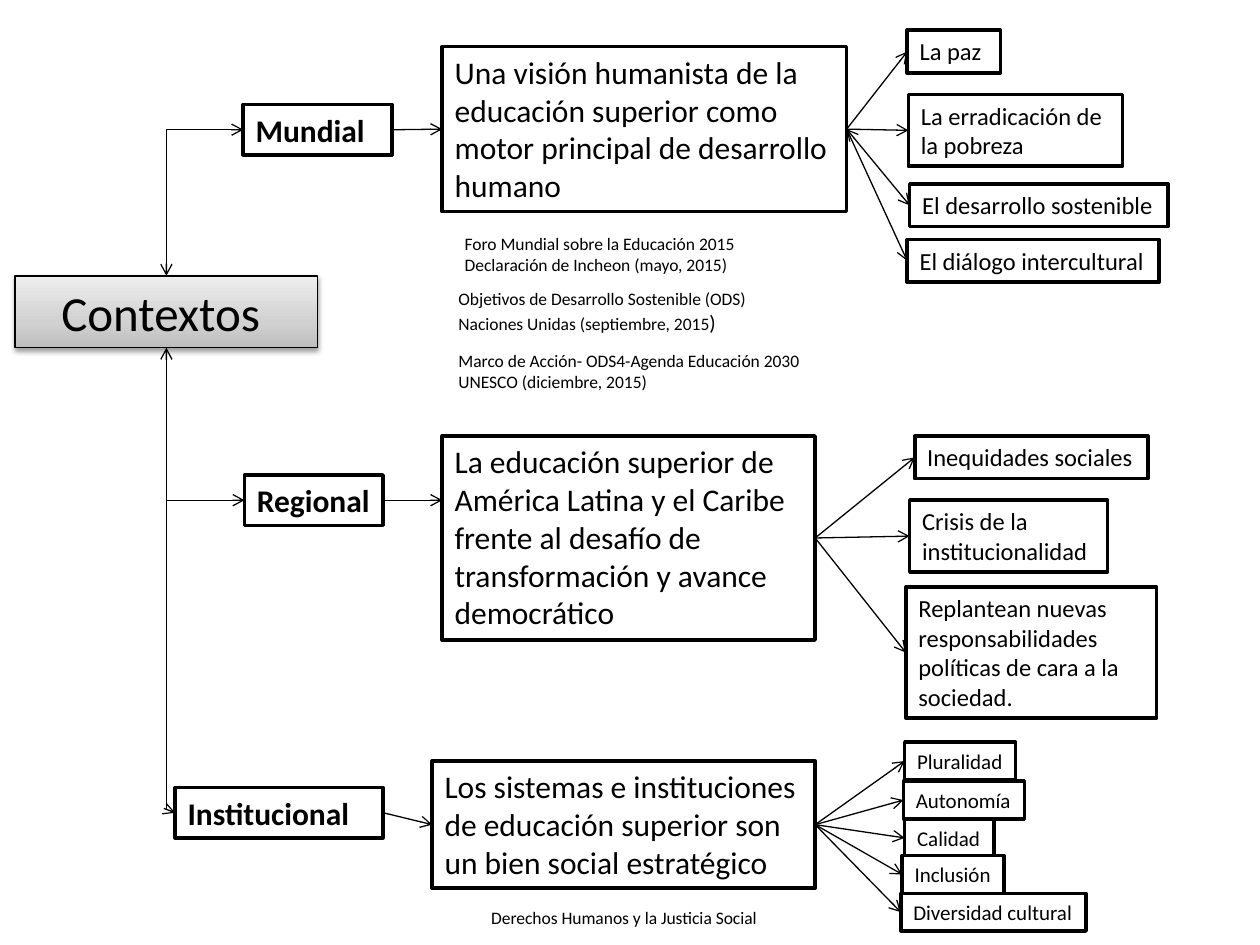
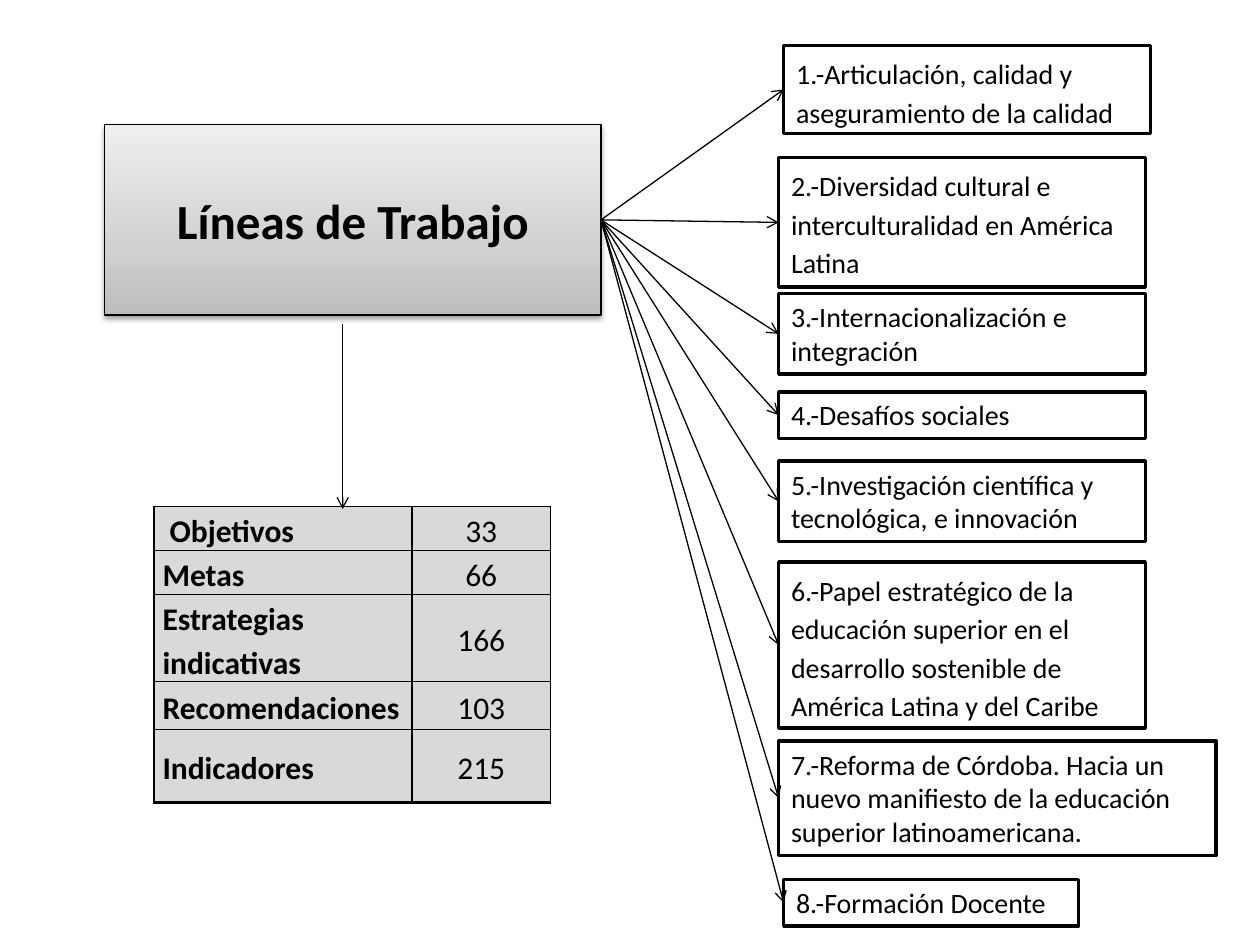
from copy import deepcopy

from lxml import etree
from pptx import Presentation
from pptx.dml.color import RGBColor
from pptx.enum import shapes, text
from pptx.oxml import ns
from pptx.util import Inches, Pt

BLACK = RGBColor(0x00, 0x00, 0x00)
WHITE = RGBColor(0xFF, 0xFF, 0xFF)
CELL_GRAY = RGBColor(0xD9, 0xD9, 0xD9)
GRADIENT = (
    (0, RGBColor(0xBD, 0xBD, 0xBD)),
    (0.35, RGBColor(0xD1, 0xD1, 0xD1)),
    (1, RGBColor(0xEE, 0xEE, 0xEE)),
)
FONT = "Calibri"
TOP, LEFT, BOTTOM, RIGHT = range(4)


def add_xml(parent, tag, **attributes):
    return etree.SubElement(parent, ns.qn(tag), {key: str(value) for key, value in attributes.items()})


class Diagram:
    def __init__(self):
        self.presentation = Presentation()
        self.presentation.slide_width = Inches(10)
        self.presentation.slide_height = Inches(7.5)
        self.slide = None

    def new_slide(self):
        self.slide = self.presentation.slides.add_slide(self.presentation.slide_layouts[6])

    def add_text(self, frame, runs, bold=False, alignment=text.PP_ALIGN.LEFT, spacing=None):
        paragraph = frame.paragraphs[0]
        paragraph.alignment = alignment
        if spacing:
            paragraph.line_spacing = spacing
        for content, size in runs:
            for index, line in enumerate(content.split("\n")):
                if index:
                    paragraph.add_line_break()
                run = paragraph.add_run()
                run.text = line
                run.font.name = FONT
                run.font.size = Pt(size)
                run.font.bold = bold
                run.font.color.rgb = BLACK

    def rectangle(self, place, line_width):
        shape = self.slide.shapes.add_shape(shapes.MSO_SHAPE.RECTANGLE, *map(Inches, place))
        shape.shadow.inherit = False
        shape.line.color.rgb = BLACK
        shape.line.width = Pt(line_width)
        return shape

    def box(self, content, place, size, bold=False, wrap=True, spacing=None):
        shape = self.rectangle(place, 2)
        shape.fill.solid()
        shape.fill.fore_color.rgb = WHITE
        frame = shape.text_frame
        frame.word_wrap = wrap
        frame.vertical_anchor = text.MSO_ANCHOR.TOP
        frame.auto_size = text.MSO_AUTO_SIZE.SHAPE_TO_FIT_TEXT
        self.add_text(frame, [(content, size)], bold, spacing=spacing)
        return shape

    def heading(self, content, place, bold=False):
        shape = self.rectangle(place, 0.75)
        shape.fill.gradient()
        properties = shape._element.spPr
        stops = properties.find(".//" + ns.qn("a:gsLst"))
        stops.insert(1, deepcopy(stops[0]))
        for stop, (position, color) in zip(shape.fill.gradient_stops, GRADIENT):
            stop.position = position
            stop.color.rgb = color
        shape.fill.gradient_angle = 90
        shadow = add_xml(properties.find(ns.qn("a:effectLst")), "a:outerShdw",
                         blurRad=Pt(3.1), dist=Pt(1.6), dir=5400000, rotWithShape=0)
        add_xml(add_xml(shadow, "a:srgbClr", val=BLACK), "a:alpha", val=38000)
        shape.text_frame.word_wrap = True
        shape.text_frame.vertical_anchor = text.MSO_ANCHOR.MIDDLE
        self.add_text(shape.text_frame, [(content, 28)], bold, text.PP_ALIGN.CENTER)
        return shape

    def note(self, runs, place, wrap=True):
        frame = self.slide.shapes.add_textbox(*map(Inches, place)).text_frame
        frame.word_wrap = wrap
        frame.auto_size = text.MSO_AUTO_SIZE.SHAPE_TO_FIT_TEXT
        self.add_text(frame, runs)

    def line(self, points=(0, 0, 0, 0), kind=shapes.MSO_CONNECTOR.STRAIGHT, head=False):
        connector = self.slide.shapes.add_connector(kind, *map(Inches, points))
        connector.line.color.rgb = BLACK
        connector.line.width = Pt(0.75)
        properties = connector._element.spPr
        outline = properties.find(ns.qn("a:ln"))
        if head:
            add_xml(outline, "a:headEnd", type="arrow")
        add_xml(outline, "a:tailEnd", type="arrow")
        add_xml(properties, "a:effectLst")
        return connector

    def arrow(self, source, target, head=False):
        connector = self.line(head=head)
        connector.begin_connect(source, RIGHT)
        connector.end_connect(target, LEFT)

    def fan(self, source, targets, two_way=()):
        for index, target in enumerate(targets):
            self.arrow(source, target, index in two_way)

    def elbow(self, source, side, target, head=True):
        connector = self.line(kind=shapes.MSO_CONNECTOR.ELBOW, head=head)
        connector.begin_connect(source, side)
        connector.end_connect(target, LEFT)
        start_x, start_y = connector.begin_x, connector.begin_y
        end_x, end_y = connector.end_x, connector.end_y
        across, along = abs(end_x - start_x), abs(end_y - start_y)
        connector.left = (start_x + end_x - along) // 2
        connector.top = (start_y + end_y - across) // 2
        connector.width, connector.height = along, across
        properties = connector._element.spPr
        properties.find(ns.qn("a:prstGeom")).set("prst", "bentConnector2")
        frame = properties.find(ns.qn("a:xfrm"))
        upward = side == TOP
        frame.set("rot", str((90 if upward else 270) * 60000))
        frame.set("flipH", "1")
        frame.set("flipV", "1" if upward else "0")

    def border(self, cell, widths):
        properties = cell._tc.get_or_add_tcPr()
        for index, (side, width) in enumerate(zip("LRTB", widths)):
            edge = etree.Element(ns.qn("a:ln" + side), {"w": str(Pt(width))})
            add_xml(add_xml(edge, "a:solidFill"), "a:srgbClr", val=BLACK)
            properties.insert(index, edge)

    def table(self, rows, place, widths, heights):
        table = self.slide.shapes.add_table(len(rows), len(widths), *map(Inches, place)).table
        for column, width in zip(table.columns, widths):
            column.width = Inches(width)
        for row, height in zip(table.rows, heights):
            row.height = Inches(height)
        for row_index, values in enumerate(rows):
            for column_index, value in enumerate(values):
                cell = table.cell(row_index, column_index)
                cell.margin_left = cell.margin_right = Inches(0.07)
                cell.margin_top = cell.margin_bottom = 0
                cell.vertical_anchor = text.MSO_ANCHOR.MIDDLE
                cell.fill.solid()
                cell.fill.fore_color.rgb = CELL_GRAY
                first, last = column_index == 0, row_index == len(rows) - 1
                alignment = text.PP_ALIGN.LEFT if first else text.PP_ALIGN.CENTER
                self.add_text(cell.text_frame, [(value, 18)], first, alignment, 1.15)
                self.border(cell, (1.5 if first else 1, 1, 1, 1.5 if last else 1))


def build_contexts(diagram):
    diagram.new_slide()
    contexts = diagram.heading("Contextos ", (0.12, 2.19, 2.4, 0.57))

    world = diagram.box("Mundial", (1.93, 0.83, 1.18, 0.4), 18, bold=True)
    vision = diagram.box(
        "Una visión humanista de la educación superior como motor principal de desarrollo humano",
        (3.51, 0.37, 3.21, 1.31), 18)
    goals = [diagram.box(content, place, 14, wrap=False) for content, place in (
        ("La paz", (7.2, 0.24, 0.74, 0.34)),
        ("La erradicación de \nla pobreza", (7.21, 0.75, 1.7, 0.57)),
        ("El desarrollo sostenible", (7.22, 1.46, 2.05, 0.34)),
        ("El diálogo intercultural", (7.2, 1.9, 2, 0.34)),
    )]
    diagram.note([("Foro Mundial sobre la Educación 2015 \nDeclaración de Incheon (mayo, 2015)", 10)],
                 (3.59, 1.8, 3.06, 0.44))
    diagram.note([("Objetivos de Desarrollo Sostenible (ODS) \nNaciones Unidas (septiembre, 2015", 10),
                  (")", 12)], (3.54, 2.24, 3.15, 0.47))
    diagram.note([("Marco de Acción- ODS4-Agenda Educación 2030 \nUNESCO (diciembre, 2015)", 10)],
                 (3.54, 2.73, 3.58, 0.44))

    region = diagram.box("Regional", (1.94, 3.77, 1.1, 0.4), 18, bold=True)
    challenge = diagram.box(
        "La educación superior de América Latina y el Caribe frente al desafío de "
        "transformación y avance democrático", (3.51, 3.46, 2.96, 1.62), 18)
    problems = [diagram.box(content, place, 14, wrap=wrap) for content, place, wrap in (
        ("Inequidades sociales", (7.26, 3.46, 1.85, 0.34), False),
        ("Crisis de la \ninstitucionalidad", (7.22, 3.97, 1.57, 0.57), False),
        ("Replantean nuevas \nresponsabilidades \npolíticas de cara a la sociedad.",
         (7.19, 4.66, 1.99, 1.04), True),
    )]

    institution = diagram.box("Institucional", (1.39, 6.25, 1.65, 0.4), 18, bold=True)
    systems = diagram.box(
        "Los sistemas e instituciones de educación superior son un bien social estratégico",
        (3.43, 6.04, 3.04, 1.01), 18)
    values = [diagram.box(content, (left, top, width, 0.3), 12, wrap=False)
              for content, left, top, width in (
                  ("Pluralidad", 7.18, 5.89, 0.88),
                  ("Autonomía", 7.17, 6.2, 0.96),
                  ("Calidad", 7.18, 6.5, 0.71),
                  ("Inclusión", 7.16, 6.79, 0.81),
                  ("Diversidad cultural", 7.15, 7.09, 1.47))]
    diagram.note([("Derechos Humanos y la Justicia Social", 10)], (3.8, 7.15, 2.34, 0.27), wrap=False)

    diagram.elbow(contexts, TOP, world)
    diagram.elbow(contexts, BOTTOM, region)
    diagram.elbow(contexts, BOTTOM, institution, head=False)
    diagram.arrow(world, vision)
    regional_arrow = diagram.line((3.04, 3.97, 3.51, 3.97))
    regional_arrow.begin_connect(region, RIGHT)
    diagram.arrow(institution, systems)
    diagram.fan(vision, goals, two_way=(2,))
    diagram.fan(challenge, problems)
    diagram.fan(systems, values)


def build_work_lines(diagram):
    diagram.new_slide()
    heading = diagram.heading("Líneas de Trabajo", (0.83, 0.99, 3.94, 1.51), bold=True)
    work_lines = [diagram.box(f"{number}.-{content}", place, 16, spacing=spacing)
                  for number, (content, place, spacing) in enumerate((
                      ("Articulación, calidad y aseguramiento de la calidad",
                       (6.22, 0.36, 2.91, 0.7), 1.15),
                      ("Diversidad cultural e interculturalidad en América Latina",
                       (6.18, 1.25, 2.91, 1.03), 1.15),
                      ("Internacionalización e integración", (6.18, 2.33, 2.91, 0.64), None),
                      ("Desafíos sociales", (6.18, 3.11, 2.91, 0.37), None),
                      ("Investigación científica y tecnológica, e innovación",
                       (6.18, 3.66, 2.91, 0.64), None),
                      ("Papel estratégico de la educación superior en el desarrollo "
                       "sostenible de América Latina y del Caribe", (6.18, 4.46, 2.91, 1.32), 1.15),
                      ("Reforma de Córdoba. Hacia un nuevo manifiesto de la educación "
                       "superior latinoamericana.", (6.18, 5.88, 3.47, 0.91), None),
                      ("Formación Docente", (6.22, 6.98, 2.34, 0.37), None)), start=1)]
    diagram.table(
        ((" Objetivos", "33"), ("Metas", "66"), ("Estrategias indicativas", "166"),
         ("Recomendaciones", "103"), ("Indicadores", "215")),
        (1.22, 4.02, 3.15, 2.35), (2.05, 1.1), (0.35, 0.35, 0.69, 0.38, 0.58))
    diagram.line((2.72, 2.57, 2.72, 4.04))
    diagram.fan(heading, work_lines)


def main():
    diagram = Diagram()
    build_contexts(diagram)
    build_work_lines(diagram)
    diagram.presentation.save("out.pptx")


if __name__ == "__main__":
    main()
